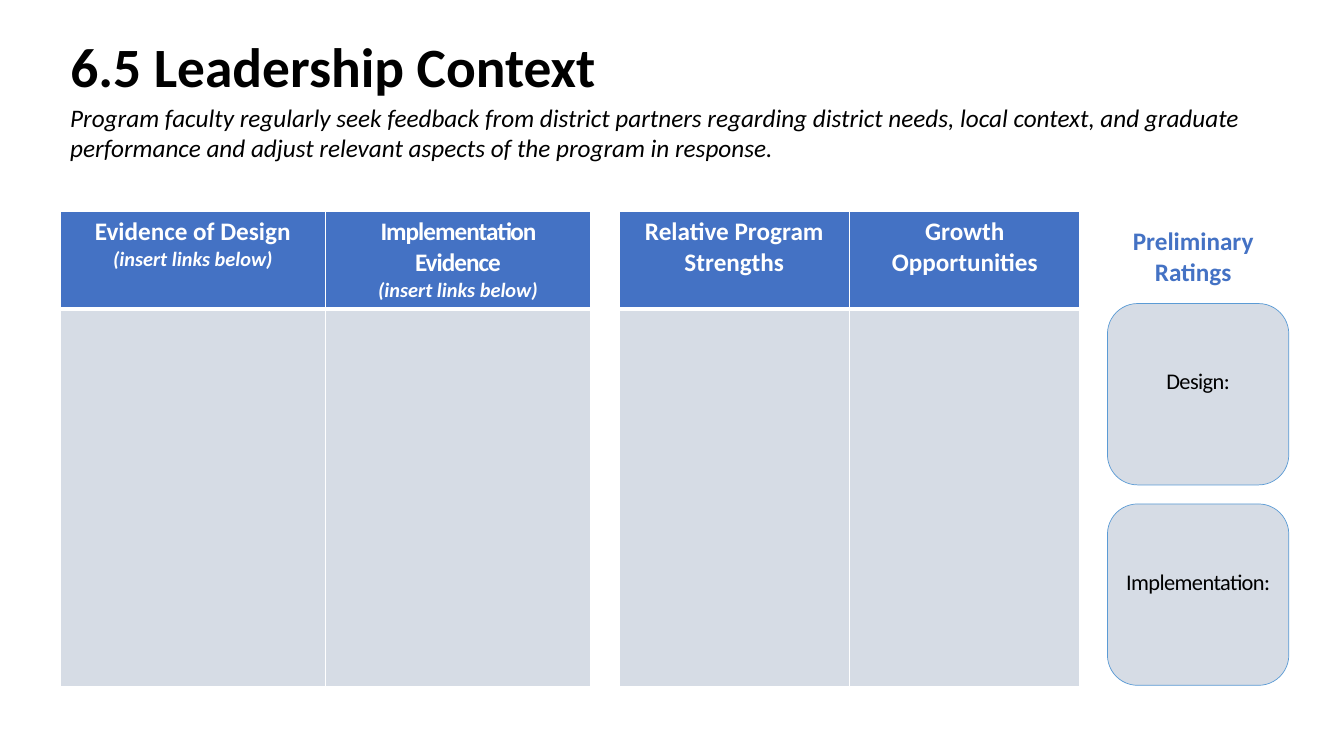
from lxml import etree
from pptx import Presentation
from pptx import util as u
from pptx.dml import color
from pptx.enum import shapes, text
from pptx.oxml import ns

FONT = "Calibri"
BLACK, WHITE = "000000", "FFFFFF"
BLUE, OUTLINE, PALE = "4472C4", "5B9BD5", "D6DCE5"

TITLE = "6.5 Leadership Context"
STANDARD = ("Program faculty regularly seek feedback from district partners regarding "
            "district needs, local context, and graduate performance and adjust "
            "relevant aspects of the program in response.")
LINKS_HINT = "(insert links below)"
RATINGS_HEADING = ["Preliminary", "Ratings"]
RATINGS = ["Design:", "Implementation:"]

# left edge and column width in cm, then (heading, hint, letter spacing in points)
TABLES = [
    (1.52, 6.68, [("Evidence of Design", LINKS_HINT, 0),
                  ("Implementation Evidence", LINKS_HINT, -0.7)]),
    (15.6, 5.81, [("Relative Program Strengths", None, 0),
                  ("Growth Opportunities", None, 0)]),
]
LEFT, TABLE_TOP = 1.52, 5.33
HEADER_HEIGHT, BODY_HEIGHT = 2.46, 9.5
RATING_LEFT, RATING_TOP, RATING_SIZE, RATING_STEP = 27.91, 7.65, 4.57, 5.05


def rgb(value):
    return color.RGBColor.from_string(value)


def format_text(para, size, tint, bold=False, italic=False, align=text.PP_ALIGN.CENTER):
    para.alignment = align
    font = para.font
    font.name, font.size, font.bold, font.italic = FONT, u.Pt(size), bold, italic
    font.color.rgb = rgb(tint)


def space_letters(para, points):
    """Widen or tighten the gaps between letters."""
    for span in para.runs:
        span.font._element.set("spc", str(round(points * 100)))


def add_text_box(page, left, top, width, height, lines, **look):
    box = page.shapes.add_textbox(u.Cm(left), u.Cm(top), u.Cm(width), u.Cm(height))
    frame = box.text_frame
    frame.word_wrap = True
    frame.text = "\n".join(lines)
    for para in frame.paragraphs:
        format_text(para, 18, **look)


def style_cell(cell, fill, top, bottom):
    """Set the fill and white borders; top and bottom are widths in points."""
    cell.fill.solid()
    cell.fill.fore_color.rgb = rgb(fill)
    properties = cell._tc.get_or_add_tcPr()
    for place, (side, width) in enumerate([("L", 1), ("R", 1), ("T", top), ("B", bottom)]):
        line = etree.Element(ns.qn(f"a:ln{side}"), w=str(u.Pt(width)))
        solid = etree.SubElement(line, ns.qn("a:solidFill"))
        etree.SubElement(solid, ns.qn("a:srgbClr"), val=WHITE)
        properties.insert(place, line)


def add_evidence_table(page, left, column_width, headings):
    table = page.shapes.add_table(
        2, len(headings), u.Cm(left), u.Cm(TABLE_TOP),
        u.Cm(column_width * len(headings)), u.Cm(HEADER_HEIGHT + BODY_HEIGHT)).table
    table.rows[0].height, table.rows[1].height = u.Cm(HEADER_HEIGHT), u.Cm(BODY_HEIGHT)
    for index, (heading, hint, spacing) in enumerate(headings):
        table.columns[index].width = u.Cm(column_width)
        header, body = table.cell(0, index), table.cell(1, index)
        style_cell(header, BLUE, top=1, bottom=3)
        style_cell(body, PALE, top=3, bottom=1)
        para = header.text_frame.paragraphs[0]
        para.text = heading
        format_text(para, 18, WHITE, bold=True)
        if spacing:
            space_letters(para, spacing)
        if hint:
            para = header.text_frame.add_paragraph()
            para.text = hint
            format_text(para, 14.5, WHITE, bold=True, italic=True)


def add_rating(page, index, label):
    box = page.shapes.add_shape(
        shapes.MSO_SHAPE.ROUNDED_RECTANGLE, u.Cm(RATING_LEFT),
        u.Cm(RATING_TOP + index * RATING_STEP), u.Cm(RATING_SIZE), u.Cm(RATING_SIZE))
    box.shadow.inherit = False
    box.fill.solid()
    box.fill.fore_color.rgb = rgb(PALE)
    box.line.color.rgb = rgb(OUTLINE)
    box.line.width = u.Pt(0.5)
    frame = box.text_frame
    frame.word_wrap = True
    frame.vertical_anchor = text.MSO_ANCHOR.MIDDLE
    frame.margin_left = frame.margin_right = frame.margin_top = u.Cm(0.13)
    frame.margin_bottom = u.Cm(0.81)  # lifts the label above the middle
    frame.text = label
    format_text(frame.paragraphs[0], 16, BLACK)
    space_letters(frame.paragraphs[0], -0.4)


def main():
    deck = Presentation()
    deck.slide_width, deck.slide_height = u.Cm(33.87), u.Cm(19.05)
    page = deck.slides.add_slide(deck.slide_layouts.get_by_name("Title Only"))

    title = page.shapes.title
    title.left, title.top = u.Cm(LEFT), u.Cm(1.02)
    title.width, title.height = u.Cm(30.02), u.Cm(1.45)
    frame = title.text_frame
    frame.text = TITLE
    frame.auto_size = text.MSO_AUTO_SIZE.NONE
    frame.vertical_anchor = text.MSO_ANCHOR.MIDDLE
    frame.paragraphs[0].line_spacing = 0.9
    format_text(frame.paragraphs[0], 39.6, BLACK, bold=True, align=text.PP_ALIGN.LEFT)

    add_text_box(page, LEFT, 2.46, 30.84, 1.8, [STANDARD],
                 tint=BLACK, italic=True, align=text.PP_ALIGN.LEFT)
    add_text_box(page, 27.62, 5.56, 4.9, 1.8, RATINGS_HEADING, tint=BLUE, bold=True)
    for index, label in enumerate(RATINGS):
        add_rating(page, index, label)
    for left, column_width, headings in TABLES:
        add_evidence_table(page, left, column_width, headings)

    deck.save("out.pptx")


if __name__ == "__main__":
    main()
